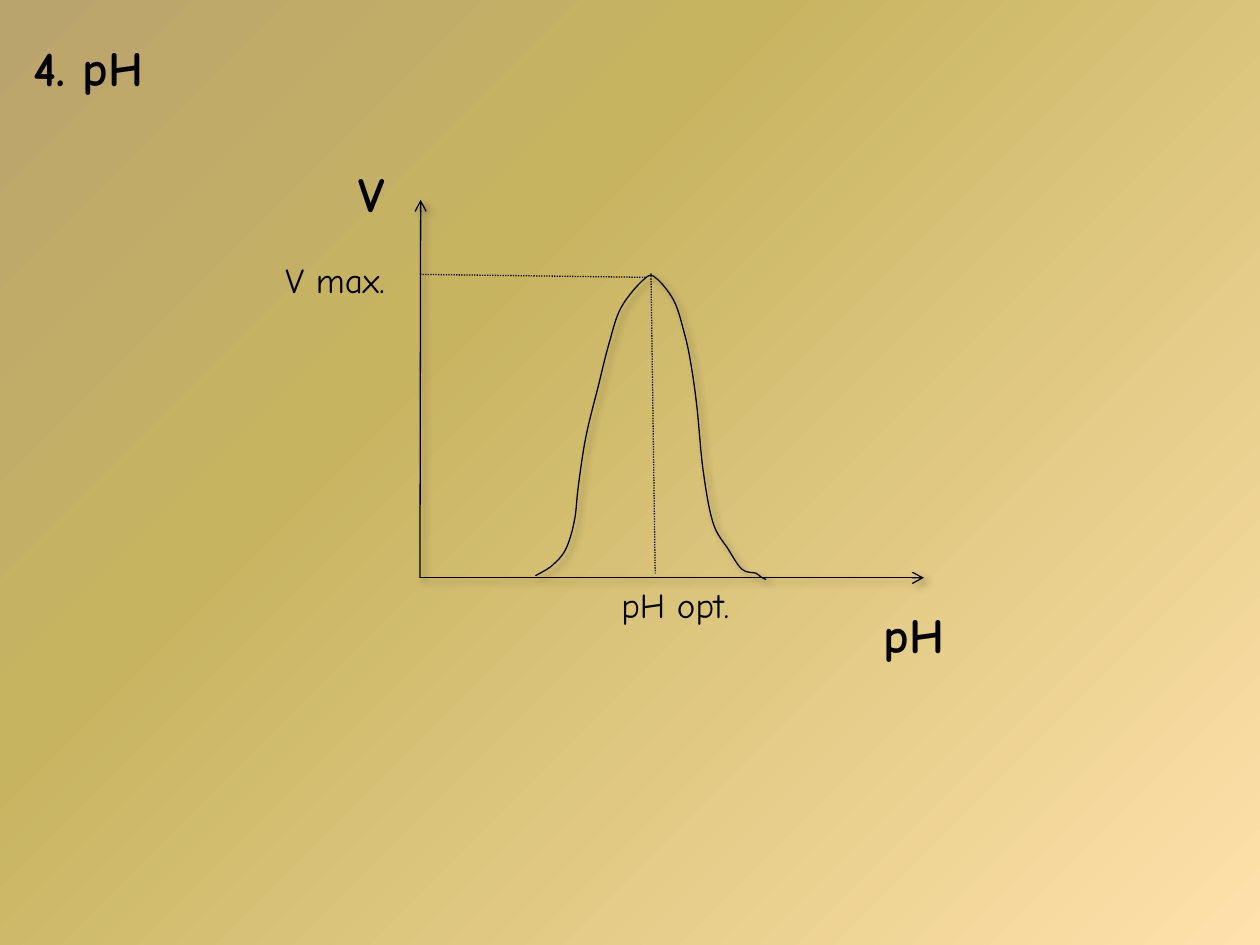
from dataclasses import dataclass
from lxml import etree
from pptx import Presentation, util as u
from pptx.dml.color import RGBColor
from pptx.enum import dml, shapes, text
from pptx.oxml import parse_xml
from pptx.oxml.ns import nsdecls, qn

Pt = u.Pt


@dataclass(frozen=True)
class Theme:
    font: str = "Comic Neue"
    ink: str = "000000"
    big: int = 28
    small: int = 20
    thin: float = 0.75
    stops: tuple = ((0, "FFE1AB"), (65, "C7B461"), (100, "BAA46E"))
    angle: int = 225


THEME = Theme()
LEFT, BASE, TOP, RIGHT = 240, 330.2, 114.2, 528
PEAK = (372, 156.2)
CURVE = [
    (306, 329), (315.4, 323.3), (323.3, 313.9), (328.3, 297.4),
    (330.5, 277.9), (334.8, 249.8), (342, 220.3), (347.8, 197.3),
    (355, 175.7), (368.6, 159.1), (375.1, 159.1), (385.2, 172.1),
    (391, 190.1), (394.6, 206.6), (398.2, 231.8), (401.8, 268.6),
    (407.5, 298.8), (416.2, 313.9), (424.1, 325.4), (432, 327.6),
    (434.9, 329.8), (437.8, 331.2),
]


def paint_back(slide):
    fill = slide.background.fill
    fill.gradient()
    fill.gradient_angle = 360 - THEME.angle
    stops = slide.background._cSld.find(".//" + qn("a:gsLst"))
    for stop in list(stops):
        stops.remove(stop)
    for place, tint in THEME.stops:
        stop = etree.SubElement(stops, qn("a:gs"), pos=str(place * 1000))
        etree.SubElement(stop, qn("a:srgbClr"), val=tint)


def set_text(shape, words, size, bold):
    frame = shape.text_frame
    frame.text = words
    frame.word_wrap = False
    frame.auto_size = text.MSO_AUTO_SIZE.SHAPE_TO_FIT_TEXT
    frame.vertical_anchor = text.MSO_ANCHOR.TOP
    para = frame.paragraphs[0]
    para.alignment = text.PP_ALIGN.LEFT
    font = para.runs[0].font
    font.name, font.size, font.bold = THEME.font, Pt(size), bold
    font.color.rgb = RGBColor.from_string(THEME.ink)


def add_title(slide, words, left, top, width, height):
    title = slide.shapes.title
    title.left, title.top = Pt(left), Pt(top)
    title.width, title.height = Pt(width), Pt(height)
    set_text(title, words, THEME.big, True)


def add_label(slide, words, left, top, width, height, size, bold=False):
    box = slide.shapes.add_textbox(Pt(left), Pt(top), Pt(width), Pt(height))
    set_text(box, words, size, bold)


def set_line(shape, shade):
    shape.line.color.rgb = RGBColor.from_string(THEME.ink)
    shape.line.width = Pt(THEME.thin)
    inner = (
        '<a:outerShdw blurRad="50800" dist="38100" dir="2700000">'
        f'<a:srgbClr val="{THEME.ink}"><a:alpha val="40000"/></a:srgbClr>'
        "</a:outerShdw>"
    ) if shade else ""
    shape._element.spPr.append(
        parse_xml(f'<a:effectLst {nsdecls("a")}>{inner}</a:effectLst>'))


def add_line(slide, start, end, shade=False):
    line = slide.shapes.add_connector(
        shapes.MSO_CONNECTOR.STRAIGHT, *map(Pt, start + end))
    set_line(line, shade)
    return line


def add_axis(slide, start, end):
    axis = add_line(slide, start, end, True)
    etree.SubElement(axis.line._get_or_add_ln(), qn("a:tailEnd"), type="arrow")


def add_guide(slide, start, end):
    guide = add_line(slide, start, end)
    guide.line.dash_style = dml.MSO_LINE.ROUND_DOT


def shift(near, start, end):
    return tuple(n + (e - s) / 6 for n, s, e in zip(near, start, end))


def bend(curve, knots, left, top):
    ends = [knots[0], *knots, knots[-1]]
    legs = curve._element.findall(".//" + qn("a:lnTo"))
    for leg, a, b, c, d in zip(legs, ends, ends[1:], ends[2:], ends[3:]):
        leg.tag = qn("a:cubicBezTo")
        leg.clear()
        for x, y in (shift(b, a, c), shift(c, d, b), c):
            etree.SubElement(leg, qn("a:pt"),
                             x=str(Pt(x - left)), y=str(Pt(y - top)))


def add_curve(slide, knots, top):
    pen = slide.shapes.build_freeform(*map(Pt, knots[0]))
    pen.add_line_segments([(Pt(x), Pt(y)) for x, y in knots[1:]], close=False)
    curve = pen.convert_to_shape()
    curve.height += curve.top - Pt(top)
    curve.top = Pt(top)
    curve._element.find(".//" + qn("a:path")).set("h", str(curve.height))
    start = curve._element.find(".//" + qn("a:moveTo")).find(qn("a:pt"))
    start.set("y", str(Pt(knots[0][1] - top)))
    bend(curve, knots, knots[0][0], top)
    curve.fill.background()
    set_line(curve, True)


def main():
    deck = Presentation()
    deck.slide_width, deck.slide_height = Pt(720), Pt(540)
    slide = deck.slides.add_slide(deck.slide_layouts[5])
    paint_back(slide)
    add_title(slide, "4. pH", 12, 18, 93, 41)
    add_axis(slide, (LEFT, BASE), (RIGHT, BASE))
    add_axis(slide, (LEFT, BASE), (LEFT + 0.4, TOP))
    add_label(slide, "pH", 498, 342, 51, 41, THEME.big, True)
    add_label(slide, "V", 198, 90, 34, 41, THEME.big, True)
    add_curve(slide, CURVE, PEAK[1])
    add_guide(slide, PEAK, (374.4, 327.6))
    add_label(slide, "pH opt.", 348, 330, 83, 32, THEME.small)
    add_guide(slide, (LEFT, 156.8), (369.4, 158.5))
    add_label(slide, "V max.", 156, 144, 76, 32, THEME.small)
    deck.save("out.pptx")


if __name__ == "__main__":
    main()
